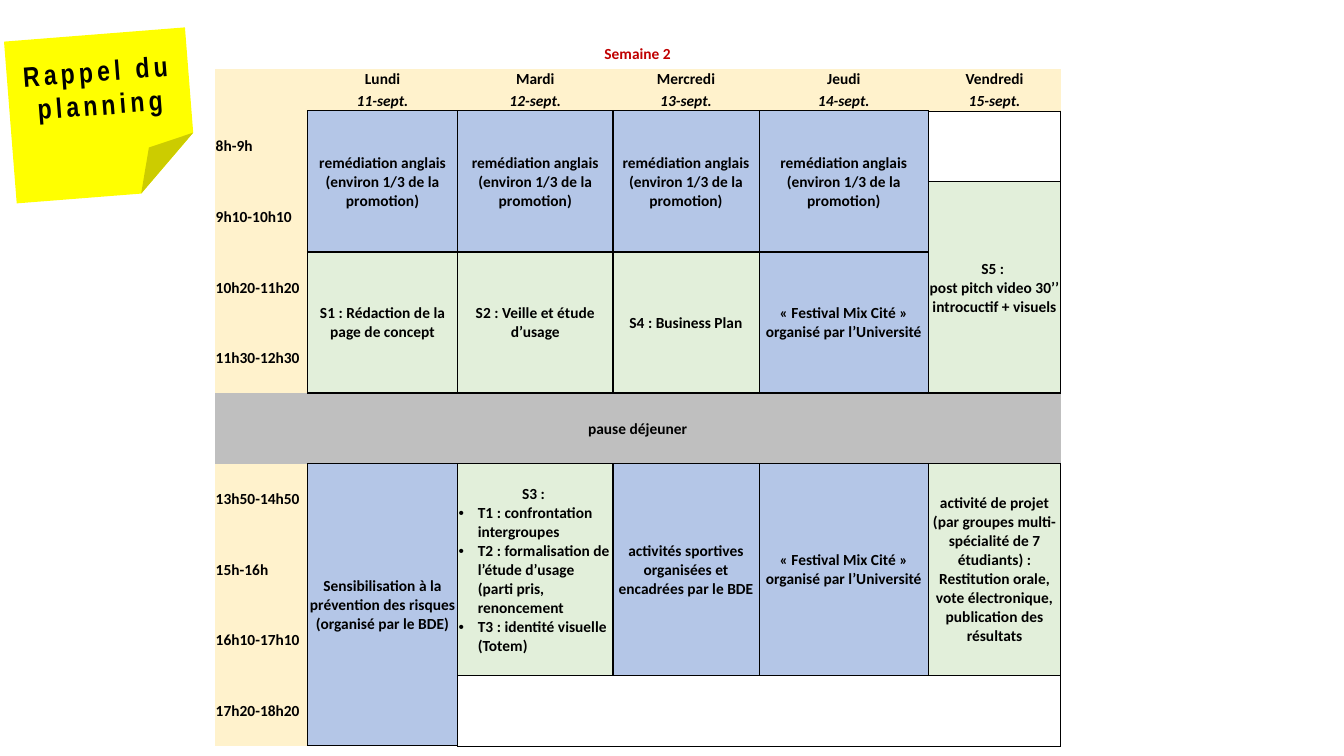
from lxml.etree import SubElement
from pptx import Presentation
from pptx.dml.color import RGBColor
from pptx.enum.shapes import MSO_SHAPE as Shape
from pptx.enum.text import MSO_ANCHOR as Anchor, PP_ALIGN as Align
from pptx.oxml.ns import qn
from pptx.util import Inches, Pt

COLORS = {"cream": "FFF2CC", "blue": "B4C6E7", "green": "E2EFDA", "grey": "BFBFBF",
          "note": "FFFF00", "black": "000000", "red": "C00000"}
COLUMNS = [0.92, 1.49, 1.54, 1.45, 1.68, 1.31]
ROWS = [0.29, 0.21, 0.21] + [0.7] * 9
DAYS = ["Lundi", "Mardi", "Mercredi", "Jeudi", "Vendredi"]
FIRST_DATE = 11
HOURS = {3: "8h-9h", 4: "9h10-10h10", 5: "10h20-11h20", 6: "11h30-12h30",
         8: "13h50-14h50", 9: "15h-16h", 10: "16h10-17h10", 11: "17h20-18h20"}
ENGLISH = "remédiation anglais (environ 1/3 de la promotion)"
FESTIVAL = "« Festival Mix Cité » organisé par l’Université"
BULLET = "•"
# row, column, rows spanned, fill, paragraphs (a leading bullet makes a list item)
SESSIONS = [(3, column, 2, "blue", [ENGLISH]) for column in range(1, 5)] + [
    (4, 5, 3, "green", ["S5 : ", "post pitch video 30’’ introcuctif + visuels"]),
    (5, 1, 2, "green", ["S1 : Rédaction de la page de concept"]),
    (5, 2, 2, "green", ["S2 : Veille et étude d’usage"]),
    (5, 3, 2, "green", ["S4 : Business Plan"]),
    (5, 4, 2, "blue", [FESTIVAL]),
    (8, 1, 4, "blue", ["Sensibilisation à la prévention des risques (organisé par le BDE)"]),
    (8, 2, 3, "green", ["S3 : ",
                        BULLET + "T1 : confrontation intergroupes",
                        BULLET + "T2 : formalisation de l’étude d’usage (parti pris, renoncement",
                        BULLET + "T3 : identité visuelle (Totem)"]),
    (8, 3, 3, "blue", ["activités sportives organisées et encadrées par le BDE"]),
    (8, 4, 3, "blue", [FESTIVAL]),
    (8, 5, 3, "green", ["activité de projet (par groupes multi-spécialité de 7 étudiants) : "
                        "Restitution orale, vote électronique, publication des résultats"]),
]
BOXED = {"L": 1, "R": 1, "T": 1, "B": 1}


def rgb(name):
    return RGBColor.from_string(COLORS[name])


def set_borders(cell, widths):
    """Draw the sides named in widths (points) and clear the others."""
    properties = cell._tc.get_or_add_tcPr()
    for side in "LRTB":
        width = widths.get(side, 0)
        line = SubElement(properties, qn("a:ln" + side), w=str(Pt(width)))
        if width:
            fill = SubElement(line, qn("a:solidFill"))
            SubElement(fill, qn("a:srgbClr"), val=COLORS["black"])
        else:
            SubElement(line, qn("a:noFill"))


def make_bullet(para):
    properties = para._p.get_or_add_pPr()
    properties.set("marL", str(Inches(0.19)))
    properties.set("indent", str(Inches(-0.19)))
    SubElement(properties, qn("a:buFont"), typeface="Arial")
    SubElement(properties, qn("a:buChar"), char=BULLET)


def add_text(para, text, size, font, color="black", italic=False):
    run = para.add_run()
    run.text = text
    run.font.size = Pt(size)
    run.font.name = font
    run.font.bold = True
    run.font.italic = italic
    run.font.color.rgb = rgb(color)
    return run


def fill_cell(cell, lines=(), fill=None, borders=None, align=Align.CENTER,
              color="black", italic=False):
    set_borders(cell, borders or {})
    if fill:
        cell.fill.solid()
        cell.fill.fore_color.rgb = rgb(fill)
    else:
        cell.fill.background()
    cell.vertical_anchor = Anchor.MIDDLE
    cell.margin_left = cell.margin_right = cell.margin_top = Inches(0.01)
    cell.margin_bottom = 0
    frame = cell.text_frame
    if not lines:
        SubElement(frame.paragraphs[0]._p, qn("a:endParaRPr"), sz="1100")
    for index, line in enumerate(lines):
        para = frame.add_paragraph() if index else frame.paragraphs[0]
        if line.startswith(BULLET):
            make_bullet(para)
        else:
            para.alignment = align
        add_text(para, line.removeprefix(BULLET), 11, "Calibri", color, italic)


def add_planning(page, left, top):
    frame = page.shapes.add_table(len(ROWS), len(COLUMNS), Inches(left), Inches(top),
                                  Inches(sum(COLUMNS)), Inches(sum(ROWS)))
    table = frame.table
    table.first_row = table.horz_banding = False
    for column, width in zip(table.columns, COLUMNS):
        column.width = Inches(width)
    for row, height in zip(table.rows, ROWS):
        row.height = Inches(height)

    last = len(COLUMNS) - 1
    for row, text, fill, color in [(0, "Semaine 2", None, "red"),
                                   (7, "pause déjeuner", "grey", "black")]:
        table.cell(row, 0).merge(table.cell(row, last))
        for column in range(len(COLUMNS)):
            fill_cell(table.cell(row, column), [] if column else [text], fill, color=color)

    for row in (1, 2):
        fill_cell(table.cell(row, 0), fill="cream")
    for column, day in enumerate(DAYS, 1):
        fill_cell(table.cell(1, column), [day], "cream")
        date = f"{FIRST_DATE + column - 1}-sept."
        under = {"B": 0.5 if column == last else 1}
        fill_cell(table.cell(2, column), [date], "cream", under, italic=True)
    for row, hours in HOURS.items():
        fill_cell(table.cell(row, 0), [hours], "cream", {"R": 1}, Align.LEFT)

    for row, column, span, fill, lines in SESSIONS:
        table.cell(row, column).merge(table.cell(row + span - 1, column))
        for offset in range(span):
            fill_cell(table.cell(row + offset, column), [] if offset else lines, fill, BOXED)

    fill_cell(table.cell(3, last), borders={"L": 1, "T": 0.5, "R": 0.5, "B": 1})
    for column in range(2, last + 1):
        ends = {2: {"L": 1}, last: {"R": 0.5}}.get(column, {})
        fill_cell(table.cell(11, column), borders={"T": 1, "B": 0.5, **ends})


def add_sticky_note(page, left, top, width, height):
    note = page.shapes.add_shape(Shape.FOLDED_CORNER, Inches(left), Inches(top),
                                 Inches(width), Inches(height))
    fold = note._element.spPr.find(qn("a:prstGeom")).find(qn("a:avLst"))
    SubElement(fold, qn("a:gd"), name="adj", fmla="val 34900")
    note.rotation = 355.5
    note.shadow.inherit = False
    note.fill.solid()
    note.fill.fore_color.rgb = rgb("note")
    note.line.fill.background()
    frame = note.text_frame
    frame.word_wrap = True
    frame.vertical_anchor = Anchor.MIDDLE
    para = frame.paragraphs[0]
    para.alignment = Align.CENTER
    run = add_text(para, "Rappel du planning", 20, "Arial Narrow")
    run.font._element.set("spc", "300")


def main():
    deck = Presentation()
    deck.slide_width, deck.slide_height = Inches(13.33), Inches(7.5)
    page = deck.slides.add_slide(deck.slide_layouts[6])
    add_planning(page, 2.13, 0.39)
    add_sticky_note(page, 0.1, 0.34, 1.8, 1.61)
    deck.save("out.pptx")


if __name__ == "__main__":
    main()
